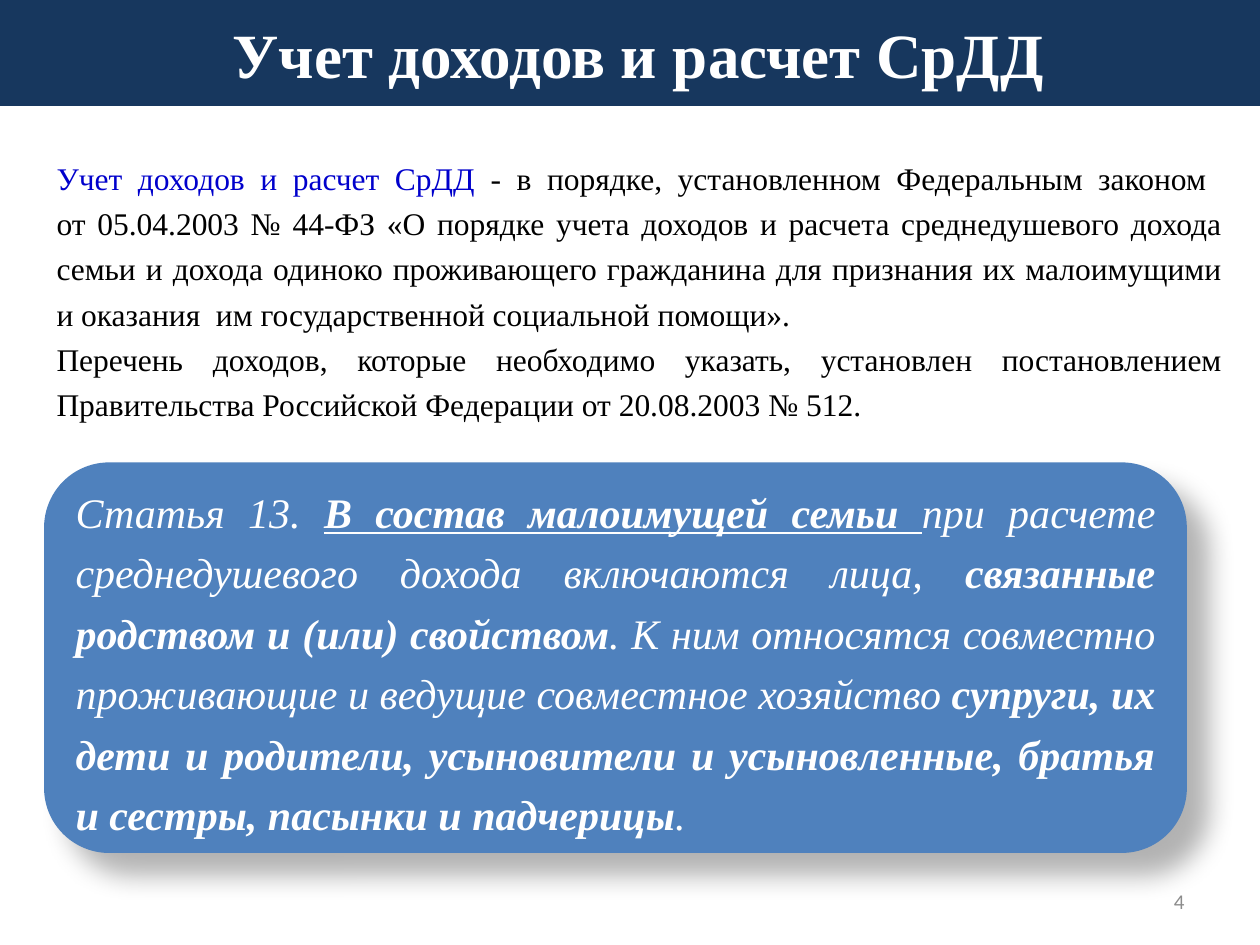
from lxml import etree
from pptx import Presentation
from pptx.dml.color import RGBColor
from pptx.enum import shapes, text
from pptx.oxml import ns
from pptx.util import Inches, Pt

SERIF = "Times New Roman"
WHITE, BLACK, NAVY, BLUE, LINK, GREY = (
    "FFFFFF", "000000", "17375E", "4F81BD", "0000CC", "8C8C8C")
LEFT, CENTER, RIGHT, JUST = (
    text.PP_ALIGN.LEFT, text.PP_ALIGN.CENTER,
    text.PP_ALIGN.RIGHT, text.PP_ALIGN.JUSTIFY)
TOP, MID = text.MSO_ANCHOR.TOP, text.MSO_ANCHOR.MIDDLE

# Content: a list of paragraphs, each a list of (words, style) runs
HEAD = [[("Учет доходов и расчет СрДД", "b")]]
LAW = [
    [("Учет доходов и расчет СрДД ", "link"),
     ("- в порядке, установленном Федеральным законом \n"
      "от 05.04.2003 № 44-ФЗ «О порядке учета доходов и расчета "
      "среднедушевого дохода семьи и дохода одиноко проживающего гражданина "
      "для признания их малоимущими и оказания  им государственной "
      "социальной помощи».", "")],
    [("Перечень доходов, которые необходимо указать, установлен "
      "постановлением Правительства Российской Федерации "
      "от 20.08.2003 № 512.", "")],
]
RULE = [[
    ("Статья 13. ", "i"),
    ("В состав малоимущей семьи ", "ibu"),
    ("при расчете среднедушевого дохода включаются лица, ", "i"),
    ("связанные родством и (или) свойством", "ib"),
    (". К ним относятся совместно проживающие и ведущие совместное "
     "хозяйство ", "i"),
    ("супруги, их дети и родители, усыновители и усыновленные, братья "
     "и сестры, пасынки и падчерицы", "ib"),
    (".", "i"),
]]
PAGE = [[("4", "")]]


def color(code):
    return RGBColor.from_string(code)


def write(shape, paras, size, tint, align, anchor, font=SERIF, gap=None):
    frame = shape.text_frame
    frame.word_wrap = True
    frame.vertical_anchor = anchor
    for n, runs in enumerate(paras):
        para = frame.add_paragraph() if n else frame.paragraphs[0]
        para.alignment = align
        if gap:
            para.line_spacing = gap
        for words, style in runs:
            for k, line in enumerate(words.split("\n")):
                if k:
                    para.add_line_break()
                run = para.add_run()
                run.text = line
                face = run.font
                face.name, face.size = font, Pt(size)
                face.color.rgb = color(LINK if style == "link" else tint)
                if style != "link":
                    face.bold = "b" in style
                    face.italic = "i" in style
                    face.underline = "u" in style


def block(slide, kind, place, fill):
    shape = slide.shapes.add_shape(kind, *map(Inches, place))
    shape.shadow.inherit = False
    shape.fill.solid()
    shape.fill.fore_color.rgb = color(fill)
    shape.line.fill.background()
    return shape


def label(slide, place):
    return slide.shapes.add_textbox(*map(Inches, place))


def shade(shape, tint, alpha, blur, dist, angle):
    """Give the shape a soft outer shadow."""
    effects = shape._element.spPr.find(ns.qn("a:effectLst"))
    outer = etree.SubElement(
        effects, ns.qn("a:outerShdw"), blurRad=str(Pt(blur)),
        dist=str(Pt(dist)), dir=str(angle * 60000),
        algn="tl", rotWithShape="0")
    tone = etree.SubElement(outer, ns.qn("a:srgbClr"), val=tint)
    etree.SubElement(tone, ns.qn("a:alpha"), val=str(alpha * 1000))


def main():
    deck = Presentation()
    deck.slide_width, deck.slide_height = Inches(10), Inches(7.5)
    slide = deck.slides.add_slide(deck.slide_layouts[6])

    # Page number
    write(label(slide, (7.17, 6.95, 2.33, 0.4)), PAGE, 12, GREY,
          RIGHT, MID, font="Calibri")

    # Law reference
    write(label(slide, (0.35, 1.15, 9.45, 2.65)), LAW, 18, BLACK,
          JUST, TOP, gap=1.2)

    # Title band, with its text set slightly right of centre
    band = block(slide, shapes.MSO_SHAPE.RECTANGLE, (0, 0, 10, 0.84), NAVY)
    band.text_frame.margin_left = Inches(0.23)
    write(band, HEAD, 36, WHITE, CENTER, MID)

    # Article card
    card = block(slide, shapes.MSO_SHAPE.ROUNDED_RECTANGLE,
                 (0.35, 3.67, 9.07, 3.1), BLUE)
    shade(card, BLACK, alpha=30, blur=15, dist=18, angle=45)
    write(card, RULE, 24, WHITE, JUST, MID, gap=1.2)

    deck.save("out.pptx")


if __name__ == "__main__":
    main()
